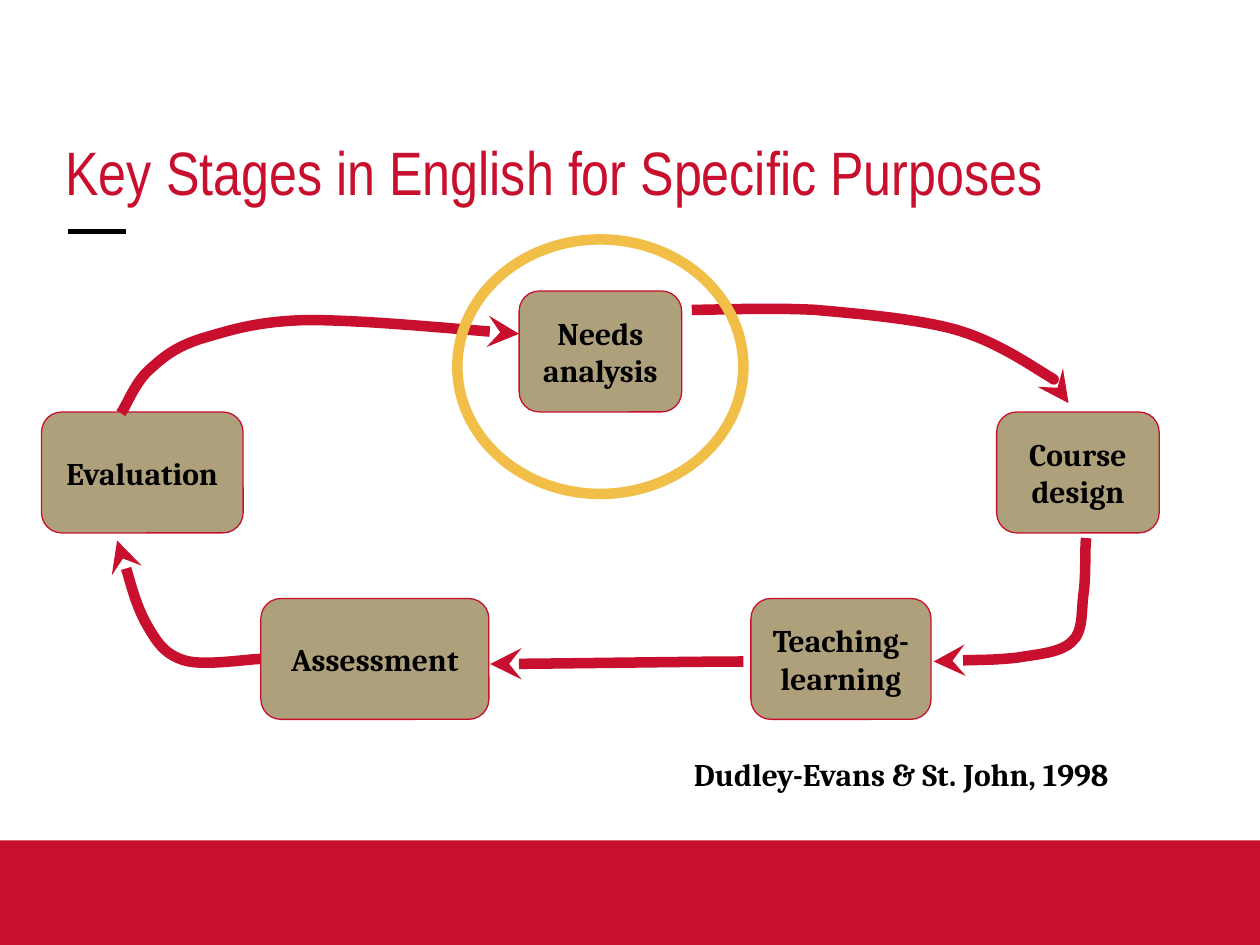
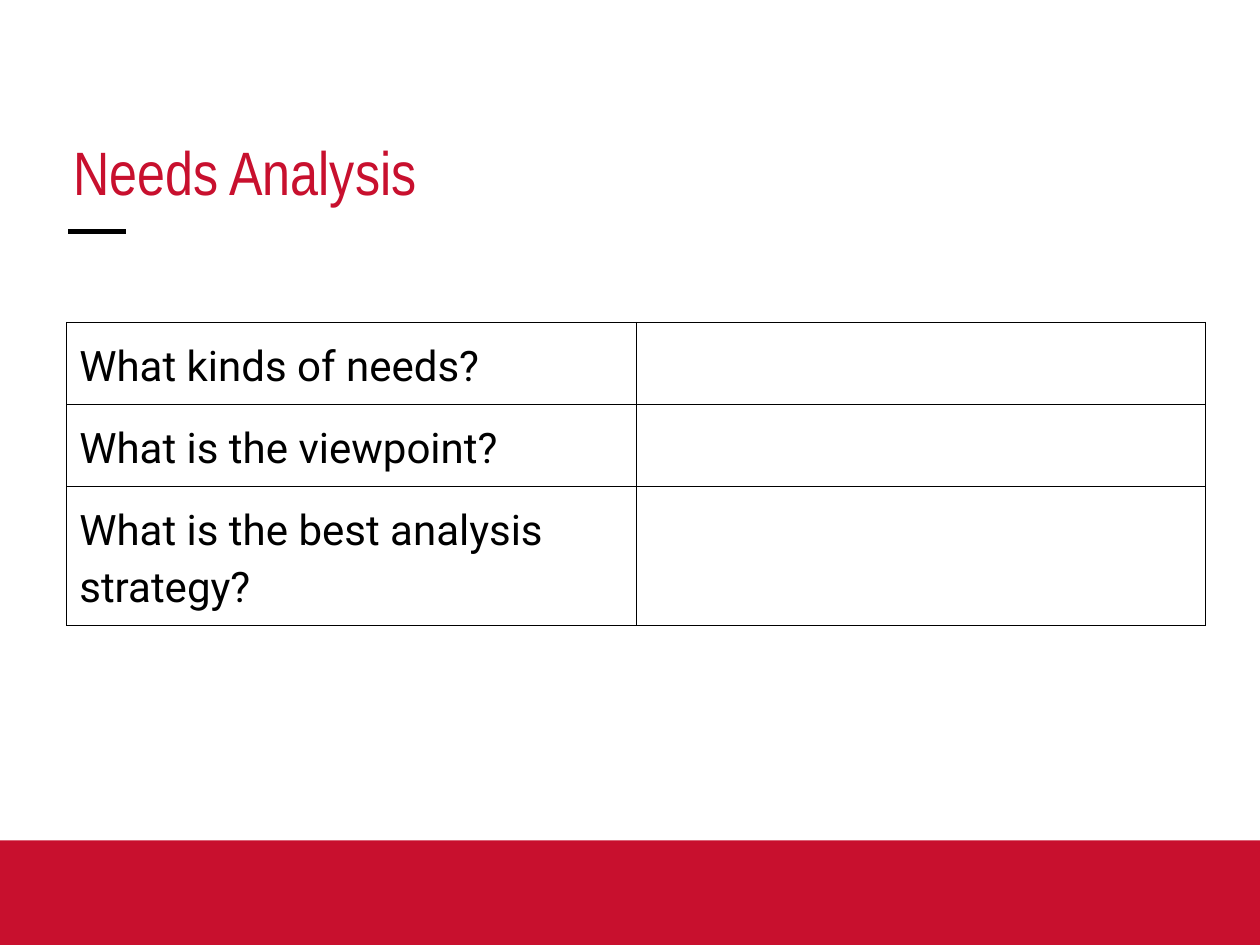
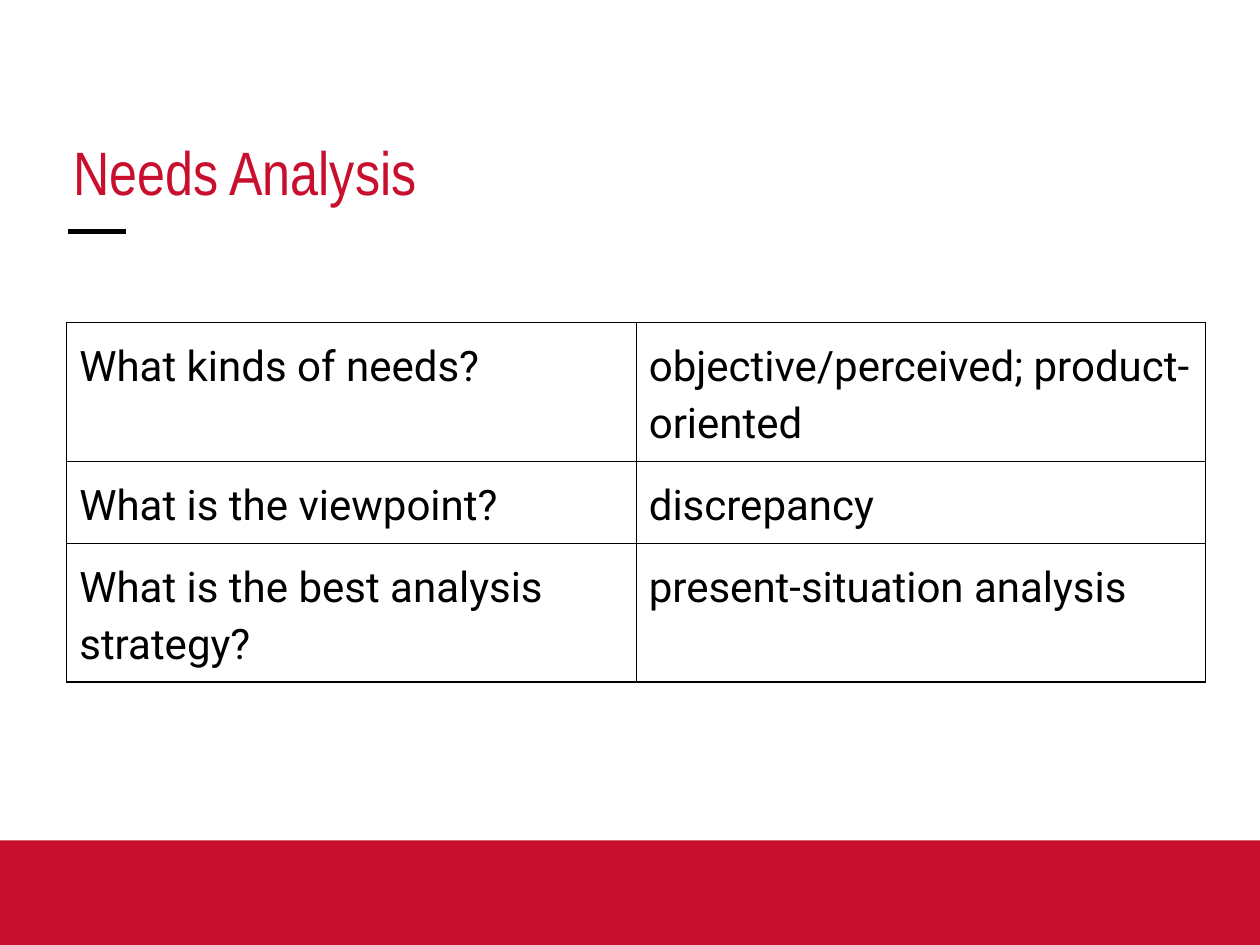
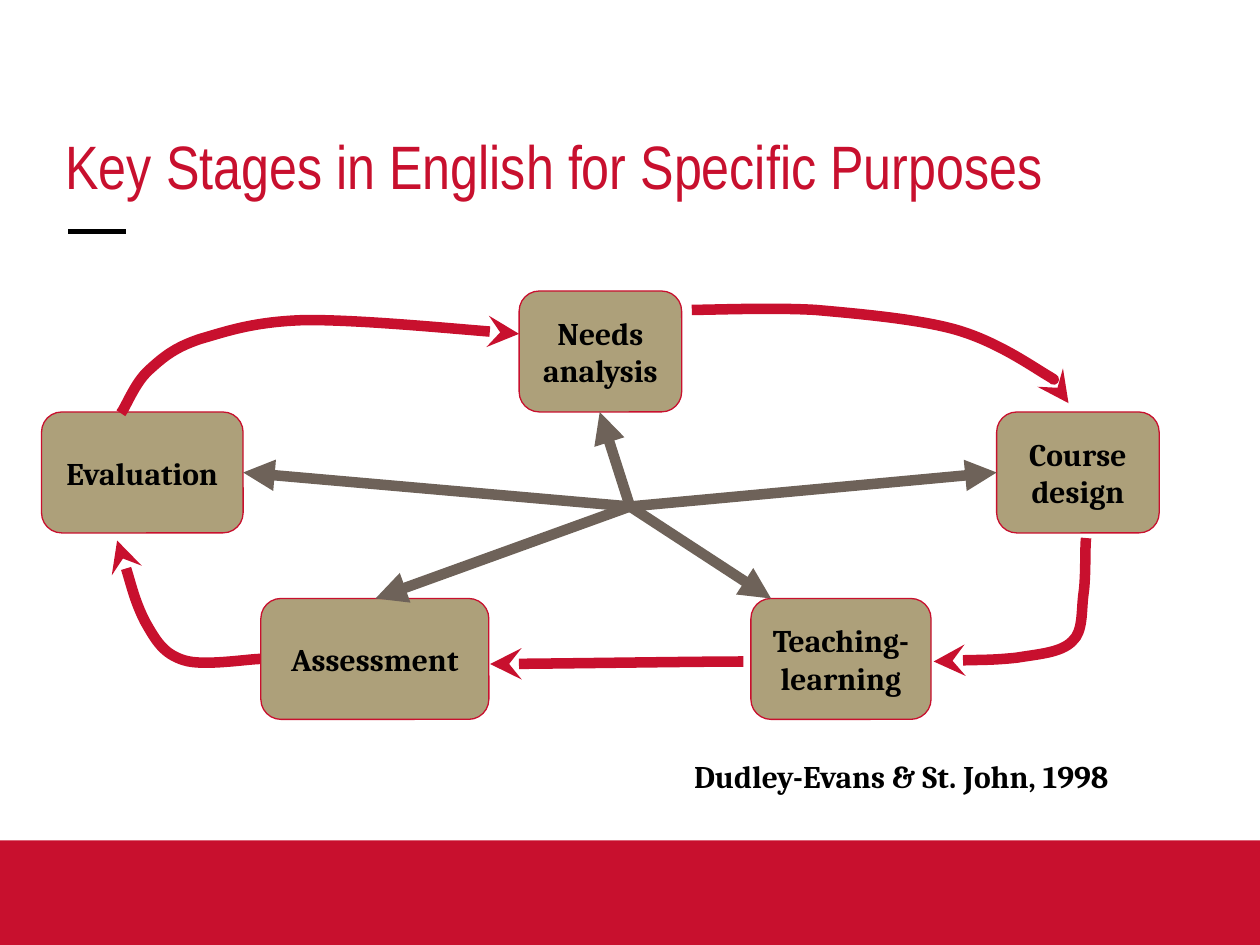
import dataclasses
import typing

import pptx
import pptx.dml.color
import pptx.enum.shapes
import pptx.enum.text
import pptx.oxml.ns
import pptx.util
from lxml import etree

Inches = pptx.util.Inches
Pt = pptx.util.Pt
qn = pptx.oxml.ns.qn
MSO_SHAPE = pptx.enum.shapes.MSO_SHAPE
STRAIGHT = pptx.enum.shapes.MSO_CONNECTOR.STRAIGHT
PP_ALIGN = pptx.enum.text.PP_ALIGN
ANCHOR = pptx.enum.text.MSO_ANCHOR
Point = tuple[float, float]

COLORS = {
    "red": "C8102E",
    "gold": "F1BE48",
    "tan": "ADA07A",
    "taupe": "6E6259",
    "black": "000000",
}
TITLE_FONT = {"name": "Arial Narrow", "size": Pt(35), "bold": False}
STAGE_FONT = {"name": "Cambria", "size": Pt(18), "bold": True}
TABLE_FONT = {"name": "Roboto", "size": Pt(24), "bold": False}
FRAME = {
    "margin_left": Inches(0.1),
    "margin_right": Inches(0.1),
    "margin_top": Inches(0.1),
    "margin_bottom": Inches(0.1),
    "word_wrap": True,
}


@dataclasses.dataclass(frozen=True)
class Stage:
    text: str
    left: float
    top: float
    width: float
    hub_end: Point  # where the spoke from the hub ends


@dataclasses.dataclass(frozen=True)
class Curve:
    start: Point
    points: list[Point]  # three points for each Bezier segment


STAGE_HEIGHT = 0.96
STAGES = [
    Stage("Needs analysis", 4.12, 2.31, 1.29, (4.76, 3.27)),
    Stage("Course design", 7.91, 3.27, 1.29, (7.91, 3.75)),
    Stage("Evaluation", 0.33, 3.27, 1.6, (1.93, 3.75)),
    Stage("Teaching-\vlearning", 5.96, 4.75, 1.43, (6.12, 4.75)),
    Stage("Assessment", 2.07, 4.75, 1.81, (2.98, 4.75)),
]
HUB = (5, 4.02)
CURVES = [
    Curve((5.49, 2.46), [
        (5.65, 2.46), (6.12, 2.44), (6.47, 2.46),
        (6.81, 2.49), (7.26, 2.53), (7.56, 2.61),
        (7.86, 2.69), (8.12, 2.86), (8.28, 2.96),
        (8.43, 3.05), (8.45, 3.16), (8.48, 3.2)]),
    Curve((8.62, 4.27), [
        (8.61, 4.34), (8.62, 4.57), (8.6, 4.71),
        (8.58, 4.85), (8.6, 5.01), (8.51, 5.09),
        (8.42, 5.18), (8.25, 5.19), (8.07, 5.22),
        (7.88, 5.24), (7.52, 5.24), (7.41, 5.25)]),
    Curve((5.9, 5.25), [(5.56, 5.25), (4.22, 5.27), (3.89, 5.27)]),
    Curve((2.07, 5.23), [
        (1.97, 5.23), (1.61, 5.29), (1.46, 5.24),
        (1.3, 5.19), (1.24, 5.09), (1.15, 4.93),
        (1.07, 4.77), (0.97, 4.39), (0.93, 4.29)]),
    Curve((0.96, 3.28), [
        (1, 3.23), (1.07, 3.04), (1.18, 2.94),
        (1.29, 2.84), (1.38, 2.76), (1.59, 2.69),
        (1.8, 2.63), (2.02, 2.55), (2.44, 2.54),
        (2.86, 2.54), (3.84, 2.63), (4.12, 2.65)]),
]

STAGES_TITLE = "Key Stages in English for Specific Purposes"
QUESTIONS = [
    "What kinds of needs?",
    "What is the viewpoint?",
    "What is the best analysis strategy?",
]
ANSWERS = [
    "objective/perceived; product-oriented",
    "discrepancy",
    "present-situation analysis",
]


# Formatting helpers
def rgb(color: str) -> pptx.dml.color.RGBColor:
    return pptx.dml.color.RGBColor.from_string(COLORS[color])


def set_all(target: typing.Any, values: dict) -> None:
    for name, value in values.items():
        setattr(target, name, value)


def inches(*values: float) -> list[int]:
    return [Inches(v) for v in values]


def write(tf: typing.Any, text: str, font: dict, color: str = "black",
          align: typing.Any = PP_ALIGN.LEFT) -> typing.Any:
    tf.text = text
    p = tf.paragraphs[0]
    p.alignment = align
    for r in p.runs:
        set_all(r.font, font)
        r.font.color.rgb = rgb(color)
    return p


def set_line(shape: typing.Any, color: str, width: float, tail: str = "") -> None:
    shape.line.color.rgb = rgb(color)
    shape.line.width = Pt(width)
    if tail:
        ln = shape.element.spPr.find(qn("a:ln"))
        etree.SubElement(ln, qn("a:tailEnd"), type=tail)


def add_line(s: typing.Any, start: Point, end: Point, color: str,
             width: float, tail: str = "") -> typing.Any:
    line = s.shapes.add_connector(STRAIGHT, *inches(*start, *end))
    set_line(line, color, width, tail)
    etree.SubElement(line.element.spPr, qn("a:effectLst"))
    return line


# Shared layout and titles
def decorate_layout(layout: typing.Any, s: typing.Any) -> None:
    """Draw the band and title rule on s, then move them to the layout."""
    for ph in list(layout.placeholders)[1:]:
        layout.shapes.element.remove(ph.element)
    band = s.shapes.add_shape(MSO_SHAPE.RECTANGLE, *inches(0, 6.67, 10, 0.83))
    band.shadow.inherit = False
    band.fill.solid()
    band.fill.fore_color.rgb = rgb("red")
    band.line.fill.background()
    rule = add_line(s, (0.54, 1.84), (1, 1.84), "black", 3)
    for shape in (band, rule):
        layout.shapes.element.append(shape.element)


def add_slide(prs: typing.Any, title: str, left: float, top: float) -> typing.Any:
    layout = prs.slide_layouts[5]
    s = prs.slides.add_slide(layout)
    if len(prs.slides) == 1:
        decorate_layout(layout, s)
    box = s.shapes.title
    box.left, box.top, box.width, box.height = inches(left, top, 9.15, 0.75)
    tf = box.text_frame
    set_all(tf, FRAME)
    tf.auto_size = pptx.enum.text.MSO_AUTO_SIZE.NONE
    tf.vertical_anchor = ANCHOR.BOTTOM
    write(tf, title, TITLE_FONT, "red")
    return s


# Diagram of stages
def add_stage(s: typing.Any, stage: Stage) -> None:
    sp = s.shapes.add_shape(
        MSO_SHAPE.ROUNDED_RECTANGLE,
        *inches(stage.left, stage.top, stage.width, STAGE_HEIGHT))
    sp.shadow.inherit = False
    sp.fill.solid()
    sp.fill.fore_color.rgb = rgb("tan")
    set_line(sp, "red", 0.75)
    tf = sp.text_frame
    set_all(tf, FRAME)
    tf.vertical_anchor = ANCHOR.MIDDLE
    write(tf, stage.text, STAGE_FONT, align=PP_ALIGN.CENTER)


def add_curve(s: typing.Any, curve: Curve) -> None:
    builder = s.shapes.build_freeform(*inches(*curve.start))
    builder.add_line_segments([inches(*pt) for pt in curve.points], close=False)
    sp = builder.convert_to_shape()
    # Join each three straight steps into one Bezier segment
    steps = list(sp.element.iter(qn("a:lnTo")))
    for i in range(0, len(steps), 3):
        bezier = etree.Element(qn("a:cubicBezTo"))
        steps[i].addprevious(bezier)
        for step in steps[i:i + 3]:
            bezier.append(step[0])
            step.getparent().remove(step)
    sp.shadow.inherit = False
    sp.fill.background()
    set_line(sp, "red", 6, "stealth")


def add_diagram(s: typing.Any, citation_at: tuple[float, ...]) -> None:
    for stage in STAGES:
        add_stage(s, stage)
    for curve in CURVES:
        add_curve(s, curve)
    tf = s.shapes.add_textbox(*inches(*citation_at)).text_frame
    set_all(tf, FRAME)
    write(tf, "Dudley-Evans & St. John, 1998", STAGE_FONT)


def add_highlight(s: typing.Any) -> None:
    ring = s.shapes.add_shape(MSO_SHAPE.OVAL, *inches(3.63, 1.9, 2.27, 2.02))
    ring.shadow.inherit = False
    ring.fill.background()
    set_line(ring, "gold", 6)


# Table of questions
def add_borders(cell: typing.Any) -> None:
    tc_pr = cell._tc.get_or_add_tcPr()
    for side in ("lnL", "lnR", "lnT", "lnB"):
        ln = etree.SubElement(tc_pr, qn(f"a:{side}"), w=str(Pt(0.75)))
        fill = etree.SubElement(ln, qn("a:solidFill"))
        etree.SubElement(fill, qn("a:srgbClr"), val=COLORS["black"])


def add_questions(s: typing.Any, answers: list[str], height: float) -> None:
    frame = s.shapes.add_table(len(QUESTIONS), 2, *inches(0.53, 2.56, 9.04, height))
    table = frame.table
    table.first_row = table.horz_banding = False
    for row, texts in zip(table.rows, zip(QUESTIONS, answers)):
        row.height = Inches(0.42)
        for cell, text in zip(row.cells, texts):
            add_borders(cell)
            cell.fill.background()
            set_all(cell, {k: v for k, v in FRAME.items() if k != "word_wrap"})
            if text:
                p = write(cell.text_frame, text, TABLE_FONT)
                set_all(p, {"line_spacing": 1.15, "space_after": Pt(16)})
    frame.height = Inches(height)


def main() -> None:
    prs = pptx.Presentation()
    prs.slide_width, prs.slide_height = inches(10, 7.5)

    # Slide 1: stages, needs analysis ringed
    s = add_slide(prs, STAGES_TITLE, 0.42, 1)
    add_diagram(s, (5.41, 5.89, 4.47, 0.57))
    add_highlight(s)

    # Slides 2 and 3: questions, then their answers
    for answers, height in (([""] * len(QUESTIONS), 2.36), (ANSWERS, 2.82)):
        s = add_slide(prs, "Needs Analysis", 0.48, 1)
        add_questions(s, answers, height)

    # Slide 4: stages joined through a hub
    s = add_slide(prs, STAGES_TITLE, 0.42, 0.95)
    add_diagram(s, (5.41, 5.91, 4.21, 0.59))
    for stage in STAGES:
        add_line(s, HUB, stage.hub_end, "taupe", 6, "triangle")

    prs.save("out.pptx")


if __name__ == "__main__":
    main()
